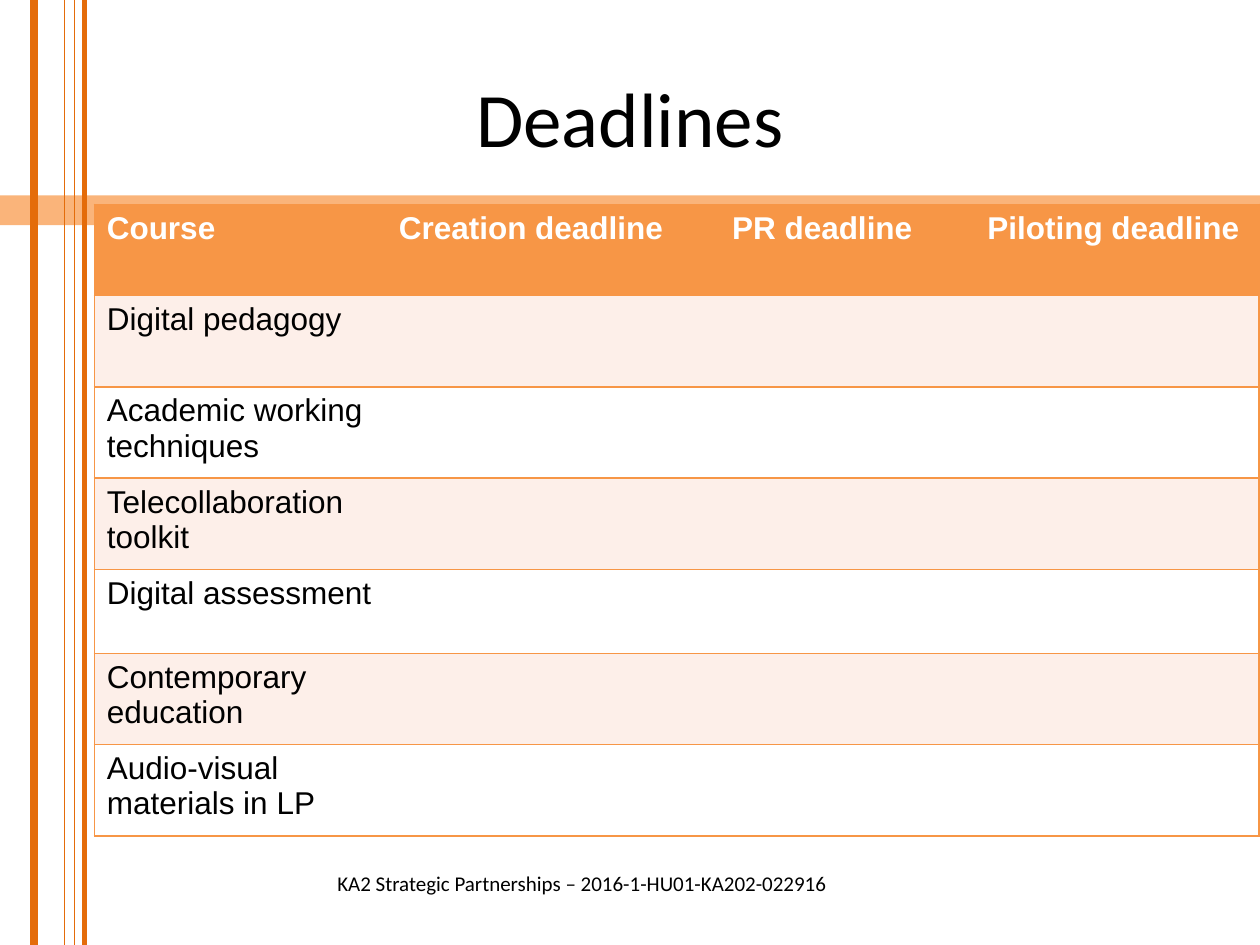
from lxml import etree
from pptx import Presentation
from pptx.dml.color import RGBColor
from pptx.enum.shapes import MSO_CONNECTOR, MSO_SHAPE
from pptx.enum.text import MSO_ANCHOR, PP_ALIGN
from pptx.oxml.ns import qn
from pptx.util import Cm, Pt

STRAIGHT = MSO_CONNECTOR.STRAIGHT
RECTANGLE = MSO_SHAPE.RECTANGLE
MIDDLE = MSO_ANCHOR.MIDDLE
LEFT, CENTER = PP_ALIGN.LEFT, PP_ALIGN.CENTER
TITLE_ONLY = 5

ORANGE, DARK_ORANGE, PALE_ORANGE = "F79646", "E46C0A", "FAB47A"
TINT, WHITE, BLACK = "FDEFE9", "FFFFFF", "000000"

SLIDE_WIDTH, SLIDE_HEIGHT = Cm(25.4), Cm(19.05)
STRIPES = [(1.3, 0.75), (1.5, 0.75), (1.7, 3), (0.69, 4.5)]  # x in cm, width in pt

HEADINGS = ["Course", "Creation deadline", "PR deadline", "Piloting deadline"]
COURSES = [
    "Digital pedagogy",
    "Academic working techniques",
    "Telecollaboration toolkit",
    "Digital assessment",
    "Contemporary education",
    "Audio-visual materials in LP",
]
COLUMN_WIDTH, ROW_HEIGHT, SHORT_ROW_HEIGHT = Cm(5.87), Cm(1.84), Cm(1.69)
SHORT_ROW = COURSES.index("Digital assessment") + 1

TITLE_FONT = {"name": "Calibri", "size": Pt(44)}
FOOTER_FONT = {"name": "Calibri", "size": Pt(12)}
HEADING_FONT = {"name": "Arial", "size": Pt(18), "bold": True}
COURSE_FONT = {"name": "Arial", "size": Pt(18), "bold": False}


def rgb(value):
    return RGBColor.from_string(value)


def set_attributes(target, values):
    for name, value in values.items():
        setattr(target, name, value)


def write(frame, text, font, color, alignment=LEFT):
    frame.text = text
    paragraph = frame.paragraphs[0]
    paragraph.alignment = alignment
    set_attributes(paragraph.font, font)
    paragraph.font.color.rgb = rgb(color)


def add_band(slide):
    band = slide.shapes.add_shape(RECTANGLE, 0, Cm(3.94), SLIDE_WIDTH, Cm(0.6))
    band.shadow.inherit = False
    band.fill.solid()
    band.fill.fore_color.rgb = rgb(PALE_ORANGE)
    band.line.fill.background()


def add_stripe(slide, x, width):
    stripe = slide.shapes.add_connector(STRAIGHT, Cm(x), 0, Cm(x), SLIDE_HEIGHT)
    stripe.line.color.rgb = rgb(DARK_ORANGE)
    stripe.line.width = Pt(width)
    etree.SubElement(stripe._element.spPr, qn("a:effectLst"))


def place_title(slide):
    title = slide.shapes.title
    set_attributes(title, {"left": Cm(1.27), "top": Cm(0.76),
                           "width": Cm(22.86), "height": Cm(3.18)})
    title.text_frame.vertical_anchor = MIDDLE
    write(title.text_frame, "Deadlines", TITLE_FONT, BLACK, CENTER)


def set_borders(cell, visible_sides):
    properties = cell._tc.get_or_add_tcPr()
    for index, side in enumerate("LRTB"):
        border = etree.Element(qn(f"a:ln{side}"), w=str(Pt(1)))
        if side in visible_sides:
            fill = etree.SubElement(border, qn("a:solidFill"))
            etree.SubElement(fill, qn("a:srgbClr"), val=ORANGE)
        else:
            etree.SubElement(border, qn("a:noFill"))
        properties.insert(index, border)


def format_cell(cell, fill, column):
    cell.fill.solid()
    cell.fill.fore_color.rgb = rgb(fill)
    outer_sides = {0: "L", len(HEADINGS) - 1: "R"}
    set_borders(cell, "TB" + outer_sides.get(column, ""))


def add_deadline_table(slide):
    rows, columns = len(COURSES) + 1, len(HEADINGS)
    table = slide.shapes.add_table(rows, columns, Cm(1.9), Cm(4.12),
                                   COLUMN_WIDTH * columns, ROW_HEIGHT * rows).table
    for column in table.columns:
        column.width = COLUMN_WIDTH
    for number, row in enumerate(table.rows):
        row.height = SHORT_ROW_HEIGHT if number == SHORT_ROW else ROW_HEIGHT
        fill = ORANGE if number == 0 else (TINT if number % 2 else WHITE)
        for column, cell in enumerate(row.cells):
            format_cell(cell, fill, column)

    for column, heading in enumerate(HEADINGS):
        write(table.cell(0, column).text_frame, heading, HEADING_FONT, WHITE,
              CENTER if column else LEFT)
    for number, course in enumerate(COURSES, start=1):
        write(table.cell(number, 0).text_frame, course, COURSE_FONT, BLACK)


def add_footer(slide):
    footer = slide.shapes.add_textbox(Cm(5.1), Cm(17.53), Cm(13.6), Cm(1.02))
    frame = footer.text_frame
    # Wider right and bottom margins set the line slightly left and high
    set_attributes(frame, {"word_wrap": True, "vertical_anchor": MIDDLE,
                           "margin_top": Cm(0.13), "margin_bottom": Cm(0.6),
                           "margin_right": Cm(0.58)})
    write(frame, "KA2 Strategic Partnerships – 2016-1-HU01-KA202-022916",
          FOOTER_FONT, BLACK, CENTER)


def main():
    deck = Presentation()
    deck.slide_width, deck.slide_height = SLIDE_WIDTH, SLIDE_HEIGHT
    slide = deck.slides.add_slide(deck.slide_layouts[TITLE_ONLY])

    # Background decoration
    add_band(slide)
    for x, width in STRIPES:
        add_stripe(slide, x, width)

    # Content
    place_title(slide)
    add_deadline_table(slide)
    add_footer(slide)
    deck.save("out.pptx")


if __name__ == "__main__":
    main()
